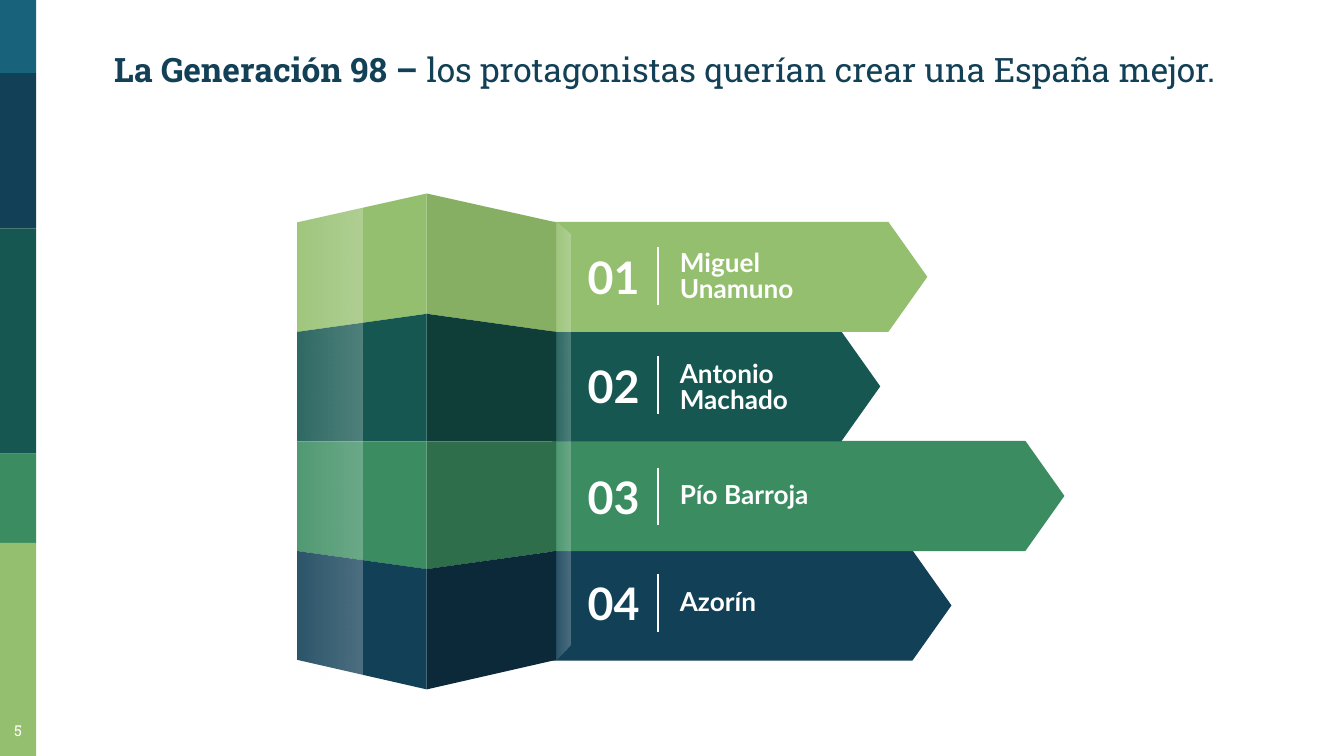
from itertools import pairwise

from lxml import etree
from pptx import Presentation
from pptx.dml.color import RGBColor
from pptx.enum.shapes import MSO_CONNECTOR, MSO_SHAPE
from pptx.enum.text import MSO_ANCHOR, MSO_AUTO_SIZE, PP_ALIGN
from pptx.oxml.ns import qn
from pptx.util import Emu, Pt

RECTANGLE, BANNER = MSO_SHAPE.RECTANGLE, MSO_SHAPE.PENTAGON
STRAIGHT = MSO_CONNECTOR.STRAIGHT
TOP, MIDDLE = MSO_ANCHOR.TOP, MSO_ANCHOR.MIDDLE
LEFT, CENTER = PP_ALIGN.LEFT, PP_ALIGN.CENTER

PX = 4572  # EMU in one px, 200 px to the inch
WIDTH, HEIGHT = 2000, 1125
WHITE, NAVY, TEAL, GREEN, LIME = "FFFFFF", "124057", "165751", "3B8D61", "94BF6E"
HEADING_FONT, LABEL_FONT = "Roboto Slab", "Lato"

# name, front colour, side colour, banner width, number top, label top
AUTHORS = [
    ("Miguel Unamuno", LIME, "87AF64", 558, 32, 33),
    ("Antonio Machado", TEAL, "0F3D38", 488, 31, 35),
    ("Pío Barroja", GREEN, "2E6E4B", 762, 34, 33),
    ("Azorín", NAVY, "0B2939", 594, 29, 30),
]


def px(*lengths):
    return [Emu(length * PX) for length in lengths]


def rgb(value):
    return RGBColor.from_string(value)


def paint(shape, colour):
    shape.shadow.inherit = False
    shape.line.fill.background()
    shape.fill.solid()
    shape.fill.fore_color.rgb = rgb(colour)


def add_block(slide, kind, box, colour):
    shape = slide.shapes.add_shape(kind, *px(*box))
    paint(shape, colour)
    return shape


def add_polygon(slide, points, colour):
    builder = slide.shapes.build_freeform(*points[0], scale=PX)
    builder.add_line_segments(points[1:], close=True)
    shape = builder.convert_to_shape()
    paint(shape, colour)
    return shape


def add_gloss(slide, points):
    shape = add_polygon(slide, points, WHITE)
    shape.fill.gradient()
    shape.fill.gradient_angle = 0
    for position, stop in enumerate(shape.fill.gradient_stops):
        stop.color.rgb = rgb(WHITE)
        stop.position = position
    for colour, percent in zip(shape.element.iter(qn("a:srgbClr")), (10, 25)):
        etree.SubElement(colour, qn("a:alpha"), val=str(percent * 1000))


def format_span(span, size, font, colour, bold):
    span.font.size = Pt(size)
    span.font.name = font
    span.font.color.rgb = rgb(colour)
    span.font.bold = bold


def set_frame(frame, anchor, inset_x, inset_y):
    frame.word_wrap = True
    frame.auto_size = MSO_AUTO_SIZE.NONE
    frame.vertical_anchor = anchor
    frame.margin_left, frame.margin_right = px(inset_x, inset_x)
    frame.margin_top, frame.margin_bottom = px(inset_y, inset_y)


def add_text(slide, box, text, size, font=LABEL_FONT, bold=True,
             align=LEFT, anchor=MIDDLE, insets=(20, 10)):
    frame = slide.shapes.add_textbox(*px(*box)).text_frame
    set_frame(frame, anchor, *insets)
    frame.text = text
    para = frame.paragraphs[0]
    para.alignment = align
    format_span(para.runs[0], size, font, WHITE, bold)
    return para


def add_divider(slide, x, top, height):
    line = slide.shapes.add_connector(STRAIGHT, *px(x, top, x, top + height))
    line.line.color.rgb = rgb(WHITE)
    line.line.width = Pt(0.75)
    etree.SubElement(line.element.spPr, qn("a:effectLst"))


def add_title(slide, box):
    title = slide.shapes.title
    title.left, title.top, title.width, title.height = px(*box)
    set_frame(title.text_frame, TOP, 20, 20)
    para = title.text_frame.paragraphs[0]
    para.alignment = LEFT
    for text, bold in (("La Generación 98 – ", True),
                       ("los protagonistas querían crear una España mejor.", False)):
        span = para.add_run()
        span.text = text
        format_span(span, 18, HEADING_FONT, NAVY, bold)


def add_sidebar(slide, box):
    left, top, width, height = box
    bounds = [0, 109, 340, 675, 808, height]
    colours = ["18637B", NAVY, TEAL, GREEN, LIME]
    for (start, end), colour in zip(pairwise(bounds), colours):
        add_block(slide, RECTANGLE, (left, top + start, width, end - start), colour)


def add_banners(slide, box):
    left, top, _, height = box
    pitch = height // len(AUTHORS)
    for row, (_, colour, _, width, _, _) in reversed(list(enumerate(AUTHORS))):
        place = (left, top + row * pitch, width, pitch + 1)
        add_block(slide, BANNER, place, colour).adjustments[0] = 0.354


def add_folded_column(slide, box):
    left, top, width, height = box
    right, spine = left + width, left + width // 2
    edge_levels = [top + y for y in (43, 206, 369, 532, 694)]
    spine_levels = [top + y for y in (0, 179, 369, 559, height)]
    rows = zip(AUTHORS, pairwise(edge_levels), pairwise(spine_levels))
    for (_, front, side, *_), (edge_top, edge_end), (spine_top, spine_end) in rows:
        for edge, colour in ((right, side), (left, front)):
            add_polygon(slide, [(spine, spine_top), (edge, edge_top),
                                (edge, edge_end), (spine, spine_end)], colour)
    # Light strip across the left face
    add_gloss(slide, [(left - 8, top + 44), (left + 97, top + 21),
                      (left + 97, top + 740), (left - 8, top + 716)])


def add_labels(slide, box):
    left, top, width, height = box
    pitch = height // len(AUTHORS)
    for row, (name, _, _, _, number_top, label_top) in enumerate(AUTHORS):
        row_top = top + row * pitch
        number_y = row_top + number_top
        add_text(slide, (left, number_y, 130, 98), f"{row + 1:02}", 24, align=CENTER)
        add_divider(slide, left + 131, number_y + 6, 86)
        label_box = (left + 144, row_top + label_top, width - 144, 100)
        add_text(slide, label_box, name, 14).line_spacing = 0.83


def add_fold_light(slide, box):
    left, top, width, height = box
    right, bottom = left + width, top + height
    add_gloss(slide, [(right, bottom - 24), (right, top + 20),
                      (left, top), (left, bottom)])


def main():
    deck = Presentation()
    deck.slide_width, deck.slide_height = px(WIDTH, HEIGHT)
    slide = deck.slides.add_slide(deck.slide_layouts[5])

    add_sidebar(slide, (0, 0, 54, HEIGHT))
    add_banners(slide, (822, 330, 762, 652))
    add_folded_column(slide, (442, 288, 386, 738))
    add_labels(slide, (848, 330, 446, 652))
    add_fold_light(slide, (828, 330, 21, 652))

    # Page number and title
    add_text(slide, (0, 1054, 54, 70), "5", 8, HEADING_FONT, False,
             CENTER, TOP, (0, 20))
    add_title(slide, (150, 53, 1764, 194))
    deck.save("out.pptx")


if __name__ == "__main__":
    main()
